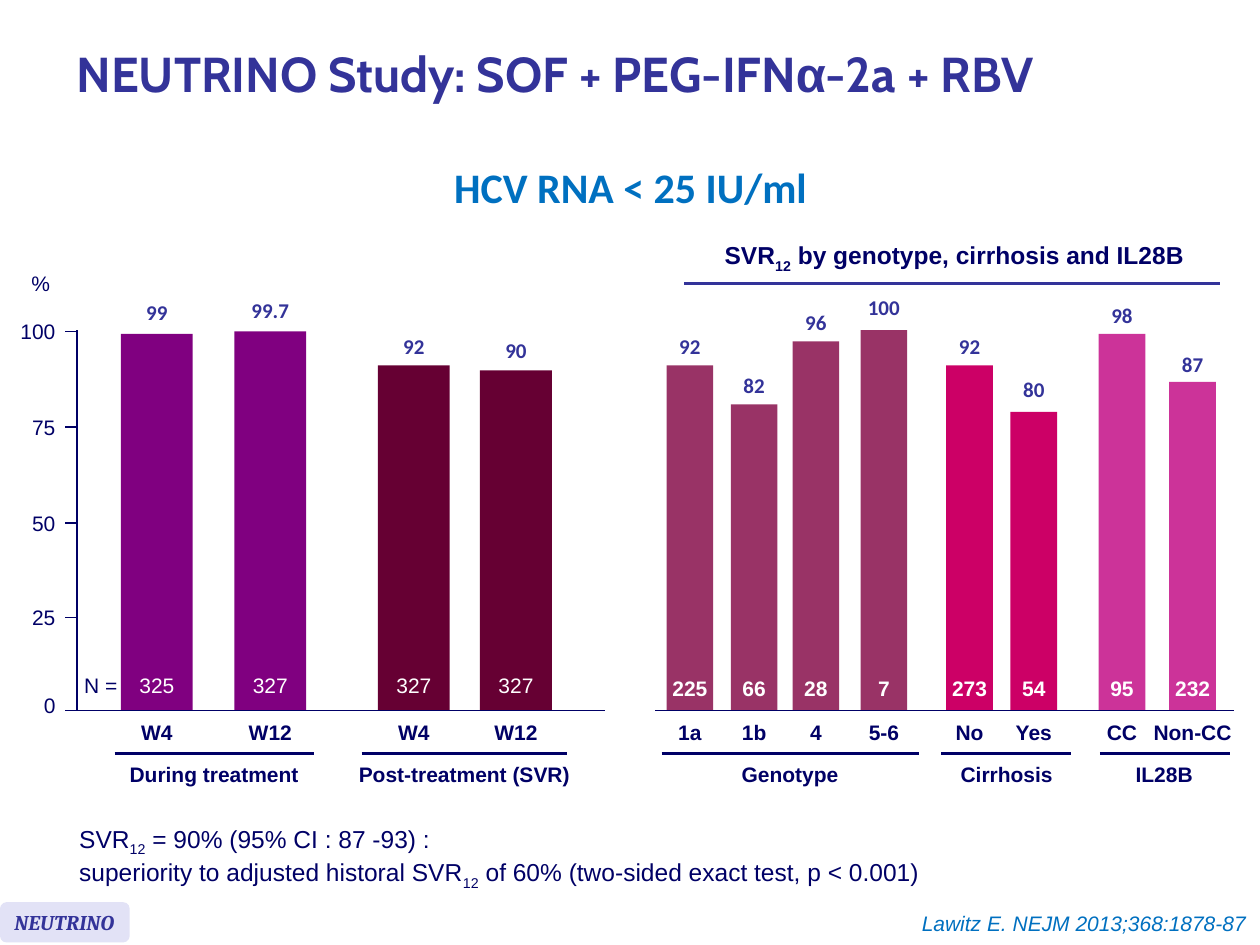
from lxml.etree import SubElement
from pptx import Presentation
from pptx.dml.color import RGBColor
from pptx.enum.shapes import MSO_CONNECTOR, MSO_SHAPE as Shape
from pptx.enum.text import MSO_ANCHOR as Anchor, PP_ALIGN as Align
from pptx.oxml.ns import qn
from pptx.util import Inches, Pt

hex_color = RGBColor.from_string

NAVY, INDIGO, BLUE, WHITE = "000066", "333399", "0070C0", "FFFFFF"
BASELINE = 5.64
BODY = {"name": "Arial", "size": Pt(12)}
BOLD = {**BODY, "bold": True}
NOTE = {"name": "Arial", "size": Pt(14)}
HEADING = {**NOTE, "bold": True}
VALUE = {"name": "Calibri", "size": Pt(12), "bold": True}
SUBTITLE = {"name": "Calibri", "size": Pt(24), "bold": True}
TITLE = {"name": "Cabin", "size": Pt(28), "bold": True}
BADGE = {"name": "Cambria", "size": Pt(12), "bold": True, "italic": True}
CITATION = {**BODY, "italic": True}

deck = Presentation()
deck.slide_width, deck.slide_height = Inches(10), Inches(7.5)
page = deck.slides.add_slide(deck.slide_layouts[6])


def write(at, lines, style, color, align=Align.CENTER, anchor=Anchor.TOP,
          margins=(0.1, 0.05), spacing=None, box=None):
    """Write lines into a box; a line is a string or a list of (text, changes),
    where the change "baseline" shifts the text by thousandths of a percent."""
    box = box or page.shapes.add_textbox(*map(Inches, at))
    frame = box.text_frame
    frame.word_wrap = False
    frame.vertical_anchor = anchor
    frame.margin_left = frame.margin_right = Inches(margins[0])
    frame.margin_top = frame.margin_bottom = Inches(margins[1])
    for index, line in enumerate(lines):
        para = frame.add_paragraph() if index else frame.paragraphs[0]
        para.alignment = align
        if spacing:
            para.line_spacing = spacing
        for text, changes in [(line, {})] if isinstance(line, str) else line:
            span = para.add_run()
            span.text = text
            span.font.color.rgb = hex_color(color)
            for name, setting in {**style, **changes}.items():
                if name == "baseline":
                    span._r.get_or_add_rPr().set("baseline", str(setting))
                else:
                    setattr(span.font, name, setting)


def rule(x1, y1, x2, y2, width=1, color=NAVY):
    line = page.shapes.add_connector(
        MSO_CONNECTOR.STRAIGHT, *map(Inches, (x1, y1, x2, y2)))
    line.line.width = Pt(width)
    line.line.color.rgb = hex_color(color)
    SubElement(line._element.spPr, qn("a:effectLst"))


# Headings
subscript = ("12", {"baseline": -25000})
write((0.51, 0.08, 9.13, 1.07),
      [[("NEUTRINO Study: SOF + PEG-IFN", {}), ("α", {"name": "Arial"}),
        ("-2a + RBV", {})]],
      TITLE, INDIGO, Align.LEFT, Anchor.MIDDLE, spacing=0.85)
write((3.49, 1.23, 3.03, 0.5), ["HCV RNA < 25 IU/ml"], SUBTITLE, BLUE)
write((5.63, 1.86, 3.89, 0.34),
      [[("SVR", {}), subscript, (" by genotype, cirrhosis and IL28B", {})]],
      HEADING, NAVY)
rule(5.43, 2.25, 9.68, 2.25, 1.5, INDIGO)

# Bars: left, top, colour, value, value label top, category, patients
during, post = "800080", "660033"
genotype, cirrhosis, il28b = "993366", "CC0066", "CC3399"
wide_bars = [
    (0.96, 2.65, during, "99", 2.28, "W4", "325"),
    (1.86, 2.63, during, "99.7", 2.26, "W12", "327"),
    (3.00, 2.90, post, "92", 2.55, "W4", "327"),
    (3.81, 2.94, post, "90", 2.58, "W12", "327"),
]
narrow_bars = [
    (5.29, 2.90, genotype, "92", 2.55, "1a", "225"),
    (5.80, 3.21, genotype, "82", 2.86, "1b", "66"),
    (6.29, 2.71, genotype, "96", 2.36, "4", "28"),
    (6.83, 2.62, genotype, "100", 2.24, "5-6", "7"),
    (7.51, 2.90, cirrhosis, "92", 2.55, "No", "273"),
    (8.02, 3.27, cirrhosis, "80", 2.89, "Yes", "54"),
    (8.72, 2.65, il28b, "98", 2.30, "CC", "95"),
    (9.28, 3.03, il28b, "87", 2.69, "Non-CC", "232"),
]
for bars, width, count_top, count_style in [
        (wide_bars, 0.57, 5.29, BODY), (narrow_bars, 0.37, 5.31, BOLD)]:
    for left, top, color, value, value_top, category, patients in bars:
        bar = page.shapes.add_shape(
            Shape.RECTANGLE,
            *map(Inches, (left, top, width, BASELINE - top)))
        bar.shadow.inherit = False
        bar.fill.solid()
        bar.fill.fore_color.rgb = hex_color(color)
        bar.line.fill.background()
        center = left + width / 2
        write((center - 0.3, value_top, 0.6, 0.4), [value], VALUE, INDIGO,
              margins=(0.1, 0.1))
        label_width = 0.85 if len(category) > 3 else 0.62
        write((center - label_width / 2, 5.66, label_width, 0.3), [category],
              BOLD, NAVY)
        write((center - 0.26, count_top, 0.52, 0.3), [patients],
              count_style, WHITE)

# Axes
rule(0.61, 2.62, 0.61, BASELINE)
rule(0.52, BASELINE, 4.8, BASELINE)
rule(5.2, BASELINE, 9.79, BASELINE)
for percent, y in [(100, 2.63), (75, 3.39), (50, 4.15), (25, 4.9), (0, 5.6)]:
    write((0.16, y - 0.1, 0.28, 0.2), [str(percent)], BODY, NAVY,
          Align.RIGHT, Anchor.MIDDLE, (0, 0))
    if percent:
        rule(0.52, y, 0.62, y)
write((0.15, 2.1, 0.35, 0.3), ["%"], BODY, NAVY, Align.LEFT)
write((0.57, 5.29, 0.47, 0.3), ["N ="], BODY, NAVY, Align.LEFT)

# Bar groups: name, label left, label width, rule start, rule end
for name, left, width, start, end in [
        ("During treatment", 0.92, 1.56, 0.91, 2.49),
        ("Post-treatment (SVR)", 2.74, 1.89, 2.87, 4.5),
        ("Genotype", 5.78, 0.98, 5.25, 7.29),
        ("Cirrhosis", 7.52, 0.94, 7.47, 8.5),
        ("IL28B", 8.91, 0.66, 8.73, 9.76)]:
    rule(start, 5.98, end, 5.98, 1.5)
    write((left, 6.02, width, 0.28), [name], BOLD, NAVY, spacing=0.9)

# Conclusion and footer
write((0.53, 6.49, 6.92, 0.57),
      [[("SVR", {}), subscript, (" = 90% (95% CI : 87 -93) :", {})],
       [("superiority to adjusted historal SVR", {}), subscript,
        (" of 60% (two-sided exact test, p < 0.001)", {})]],
      NOTE, NAVY, Align.LEFT)
badge = page.shapes.add_shape(
    Shape.ROUNDED_RECTANGLE, *map(Inches, (0, 7.16, 1.03, 0.32)))
badge.shadow.inherit = False
badge.fill.solid()
badge.fill.fore_color.rgb = hex_color("E2E2F6")
badge.line.fill.background()
write(None, ["NEUTRINO"], BADGE, INDIGO, Align.LEFT, Anchor.MIDDLE, box=badge)
write((7.15, 7.18, 2.84, 0.3), ["Lawitz E. NEJM 2013;368:1878-87"],
      CITATION, BLUE, Align.RIGHT)

deck.save("out.pptx")
